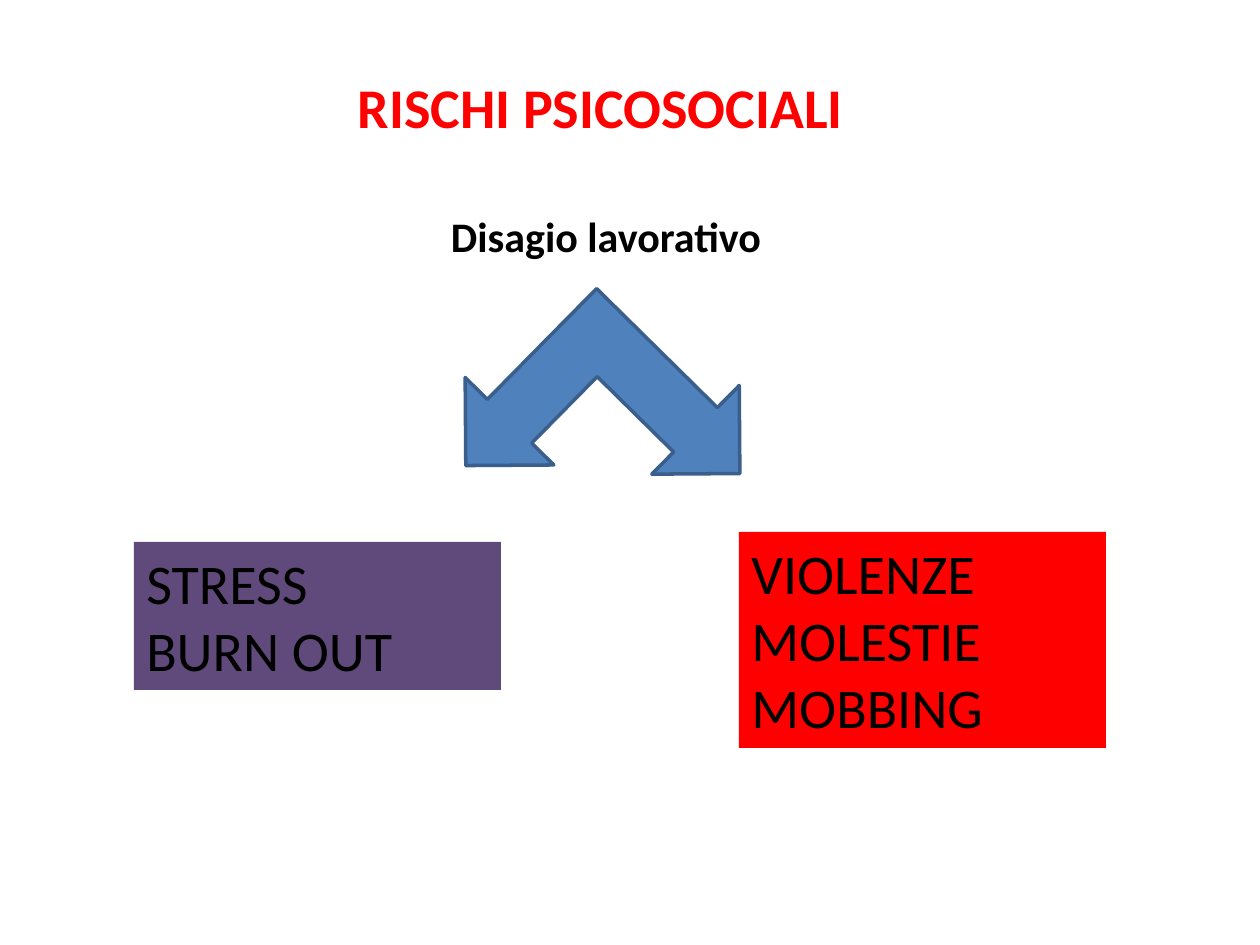
from pptx import Presentation
from pptx.dml.color import RGBColor
from pptx.enum.shapes import MSO_SHAPE as Shape
from pptx.enum.text import MSO_ANCHOR as Anchor, MSO_AUTO_SIZE as AutoSize, PP_ALIGN as Align
from pptx.util import Emu, Pt

PX_PER_INCH = 126
FONT = "Calibri"
BLACK = RGBColor(0x00, 0x00, 0x00)
RED = RGBColor(0xFF, 0x00, 0x00)
PURPLE = RGBColor(0x60, 0x4A, 0x7B)
BLUE = RGBColor(0x4F, 0x81, 0xBD)
DARK_BLUE = RGBColor(0x3A, 0x5F, 0x8C)


def px(length):
    return Emu(round(length * 914400 / PX_PER_INCH))


def to_emu(box):
    return [px(length) for length in box]


def write_lines(frame, lines, size, color, align, bold=False, wrap=True):
    frame.word_wrap = wrap
    frame.auto_size = AutoSize.SHAPE_TO_FIT_TEXT
    frame.vertical_anchor = Anchor.TOP
    for index, line in enumerate(lines):
        para = frame.add_paragraph() if index else frame.paragraphs[0]
        para.alignment = align
        span = para.add_run()
        span.text = line
        font = span.font
        font.name, font.size, font.bold = FONT, Pt(size), bold
        font.color.rgb = color


def add_heading(page, box, text, size, color, wrap=True):
    heading = page.shapes.add_textbox(*to_emu(box))
    write_lines(heading.text_frame, [text], size, color, Align.CENTER, bold=True, wrap=wrap)


def add_split_arrow(page, box):
    arrow = page.shapes.add_shape(Shape.LEFT_UP_ARROW, *to_emu(box))
    arrow.rotation = 224.6
    arrow.shadow.inherit = False
    arrow.fill.solid()
    arrow.fill.fore_color.rgb = BLUE
    arrow.line.color.rgb = DARK_BLUE
    arrow.line.width = Pt(2)


def add_risk_box(page, box, lines, color):
    panel = page.shapes.add_shape(Shape.RECTANGLE, *to_emu(box))
    panel.shadow.inherit = False
    panel.fill.solid()
    panel.fill.fore_color.rgb = color
    panel.line.fill.background()
    write_lines(panel.text_frame, lines, 32, BLACK, Align.LEFT)


def main():
    deck = Presentation()
    deck.slide_width, deck.slide_height = px(1260), px(945)
    page = deck.slides.add_slide(deck.slide_layouts[6])

    # Title and the theme it leads to
    add_heading(page, (343, 66, 528, 81), "RISCHI PSICOSOCIALI ", 32, RED, wrap=False)
    add_heading(page, (432, 204, 348, 63), "Disagio lavorativo", 24, BLACK)

    # Arrow splitting towards the two groups of risks
    add_split_arrow(page, (471, 301, 263, 249))
    add_risk_box(page, (134, 542, 367, 148), ["STRESS", "BURN OUT"], PURPLE)
    add_risk_box(page, (739, 532, 367, 216), ["VIOLENZE", "MOLESTIE", "MOBBING"], RED)

    deck.save("out.pptx")


if __name__ == "__main__":
    main()
